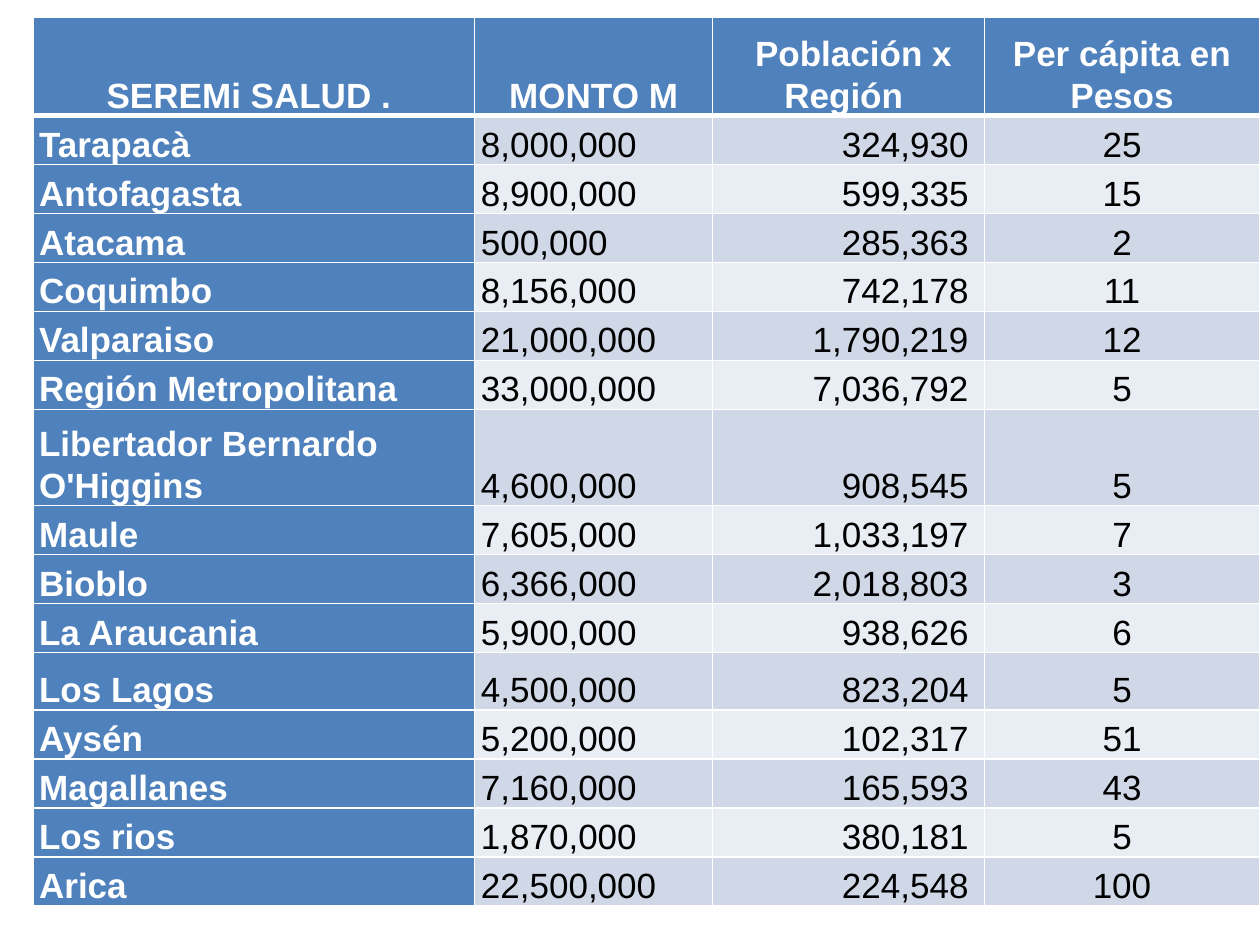
from lxml import etree
from pptx import Presentation
from pptx.dml.color import RGBColor
from pptx.enum import text
from pptx.oxml import ns
from pptx.util import Pt

WHITE = RGBColor(0xFF, 0xFF, 0xFF)
BLACK = RGBColor(0, 0, 0)
BLUE = RGBColor(0x4F, 0x81, 0xBD)
BANDS = RGBColor(0xD0, 0xD8, 0xE8), RGBColor(0xE9, 0xED, 0xF4)
LEFT, CENTER, RIGHT = text.PP_ALIGN.LEFT, text.PP_ALIGN.CENTER, text.PP_ALIGN.RIGHT

HEADINGS = ("SEREMi SALUD . ", "MONTO M", " Población x Región ", "Per cápita en Pesos")
REGIONS = [
    ("Tarapacà", "8,000,000", "324,930 ", "25"),
    ("Antofagasta", "8,900,000", "599,335 ", "15"),
    ("Atacama", "500,000", "285,363 ", "2"),
    ("Coquimbo", "8,156,000", "742,178 ", "11"),
    ("Valparaiso", "21,000,000", "1,790,219 ", "12"),
    ("Región Metropolitana", "33,000,000", "7,036,792 ", "5"),
    ("Libertador Bernardo O'Higgins", "4,600,000", "908,545 ", "5"),
    ("Maule", "7,605,000", "1,033,197 ", "7"),
    ("Bioblo", "6,366,000", "2,018,803 ", "3"),
    ("La Araucania", "5,900,000", "938,626 ", "6"),
    ("Los Lagos", "4,500,000", "823,204 ", "5"),
    ("Aysén", "5,200,000", "102,317 ", "51"),
    ("Magallanes", "7,160,000", "165,593 ", "43"),
    ("Los rios", "1,870,000", "380,181 ", "5"),
    ("Arica", "22,500,000", "224,548 ", "100"),
]
COLUMN_WIDTHS = (252.5, 136, 155.5, 157)
ROW_HEIGHT = 28
TALL_ROWS = {0: 56, 7: 55, 11: 33}
CELL_FORMAT = {
    "vertical_anchor": text.MSO_ANCHOR.BOTTOM,
    "margin_left": Pt(3.6),
    "margin_right": Pt(3.6),
    "margin_top": 0,
    "margin_bottom": 0,
}


def add_borders(cell, widths):
    properties = cell._tc.get_or_add_tcPr()
    for side, width in widths.items():
        line = etree.SubElement(properties, ns.qn(f"a:ln{side}"), w=str(Pt(width)))
        fill = etree.SubElement(line, ns.qn("a:solidFill"))
        etree.SubElement(fill, ns.qn("a:srgbClr"), val=str(WHITE))


prs = Presentation()
prs.slide_width, prs.slide_height = Pt(720), Pt(540)
slide = prs.slides.add_slide(prs.slide_layouts[6])

# Regional budget table
rows = [HEADINGS, *REGIONS]
heights = [TALL_ROWS.get(i, ROW_HEIGHT) for i in range(len(rows))]
budget = slide.shapes.add_table(
    len(rows), len(HEADINGS), Pt(18.75), Pt(10),
    Pt(sum(COLUMN_WIDTHS)), Pt(sum(heights))).table
budget.first_col = True
for column, width in zip(budget.columns, COLUMN_WIDTHS):
    column.width = Pt(width)
for row, height in zip(budget.rows, heights):
    row.height = Pt(height)

# Cell contents, borders and fills
for r, values in enumerate(rows):
    for c, value in enumerate(values):
        cell = budget.cell(r, c)
        is_heading = r == 0 or c == 0
        for name, setting in CELL_FORMAT.items():
            setattr(cell, name, setting)
        add_borders(cell, {"L": 1, "R": 1, "T": 3 if r == 1 else 1, "B": 3 if r == 0 else 1})
        cell.fill.solid()
        cell.fill.fore_color.rgb = BLUE if is_heading else BANDS[(r - 1) % 2]

        paragraph = cell.text_frame.paragraphs[0]
        paragraph.alignment = CENTER if r == 0 else (LEFT, LEFT, RIGHT, CENTER)[c]
        paragraph.line_spacing = 1.07
        run = paragraph.add_run()
        run.text = value
        for name, setting in {"name": "Arial", "size": Pt(20), "bold": is_heading}.items():
            setattr(run.font, name, setting)
        run.font.color.rgb = WHITE if is_heading else BLACK

prs.save("out.pptx")
